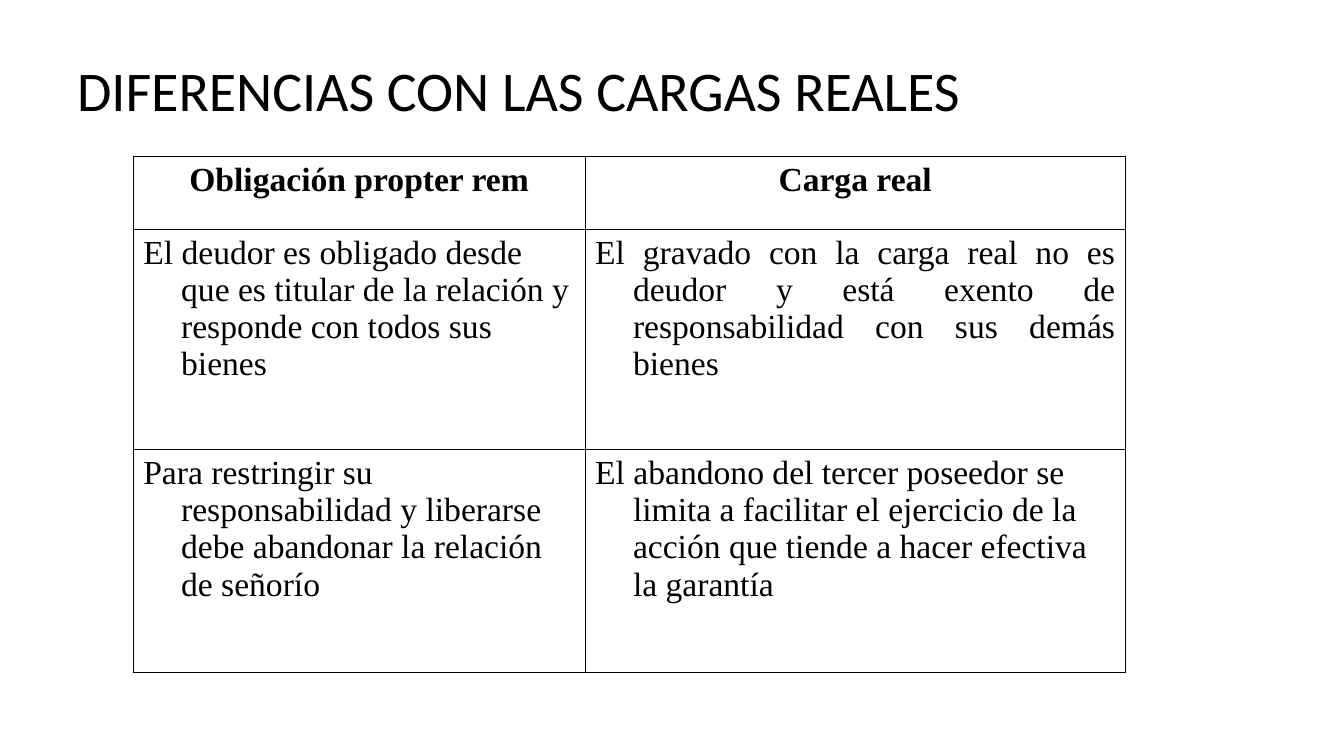
"""Build a slide comparing propter rem obligations with real charges."""
from dataclasses import dataclass

from lxml import etree
from pptx import Presentation
from pptx.dml.color import RGBColor
from pptx.enum import text
from pptx.oxml import ns
from pptx.util import Pt


@dataclass(frozen=True)
class Theme:
    ink: str = "000000"
    paper: str = "FFFFFF"
    title_font: str = "Calibri"
    table_font: str = "Times New Roman"
    title_size: int = 40
    table_size: int = 24


theme = Theme()


def style_runs(paragraph, font_name, size, bold=False):
    for run in paragraph.runs:
        run.font.name = font_name
        run.font.size = Pt(size)
        run.font.bold = bold
        run.font.color.rgb = RGBColor.from_string(theme.ink)


def add_borders(cell):
    properties = cell._tc.get_or_add_tcPr()
    for side in ("a:lnL", "a:lnR", "a:lnT", "a:lnB"):
        line = etree.SubElement(properties, ns.qn(side), w=str(Pt(1)))
        fill = etree.SubElement(line, ns.qn("a:solidFill"))
        etree.SubElement(fill, ns.qn("a:srgbClr"), val=theme.ink)


presentation = Presentation()
presentation.slide_width = Pt(960)
presentation.slide_height = Pt(540)
slide = presentation.slides.add_slide(presentation.slide_layouts[6])
slide.background.fill.solid()
slide.background.fill.fore_color.rgb = RGBColor.from_string(theme.paper)

title = slide.shapes.add_textbox(Pt(48), Pt(21.6), Pt(864), Pt(90))
title.text_frame.word_wrap = True
title.text_frame.vertical_anchor = text.MSO_ANCHOR.MIDDLE
title.text_frame.text = "DIFERENCIAS CON LAS CARGAS REALES"
title_paragraph = title.text_frame.paragraphs[0]
title_paragraph.line_spacing = 0.9
style_runs(title_paragraph, theme.title_font, theme.title_size)

left, center, justify = text.PP_ALIGN.LEFT, text.PP_ALIGN.CENTER, text.PP_ALIGN.JUSTIFY
comparison = [
    [("Obligación propter rem", center), ("Carga real", center)],
    [
        ("El deudor es obligado desde que es titular de la relación y "
         "responde con todos sus bienes", left),
        ("El gravado con la carga real no es deudor y está exento de "
         "responsabilidad con sus demás bienes", justify),
    ],
    [
        ("Para restringir su responsabilidad y liberarse debe abandonar "
         "la relación de señorío", left),
        ("El abandono del tercer poseedor se limita a facilitar el ejercicio "
         "de la acción que tiende a hacer efectiva la garantía", left),
    ],
]
column_widths = [322.8, 385.8]
row_heights = [52.3, 157.3, 159]

table = slide.shapes.add_table(
    len(row_heights), len(column_widths), Pt(95.2), Pt(111.6),
    Pt(sum(column_widths)), Pt(sum(row_heights)),
).table
table.first_row = False
table.horz_banding = False
for column, width in zip(table.columns, column_widths):
    column.width = Pt(width)
for row, height in zip(table.rows, row_heights):
    row.height = Pt(height)

for row_index, entries in enumerate(comparison):
    for column_index, (wording, alignment) in enumerate(entries):
        cell = table.cell(row_index, column_index)
        add_borders(cell)
        cell.fill.background()
        cell.margin_left = cell.margin_right = Pt(7.2)
        cell.margin_top = cell.margin_bottom = Pt(3.6)
        cell.text_frame.text = wording
        paragraph = cell.text_frame.paragraphs[0]
        paragraph.alignment = alignment
        indent = paragraph._p.get_or_add_pPr()
        indent.set("marL", str(Pt(27)))
        indent.set("indent", str(-Pt(27)))
        style_runs(paragraph, theme.table_font, theme.table_size, bold=row_index == 0)

presentation.save("out.pptx")
